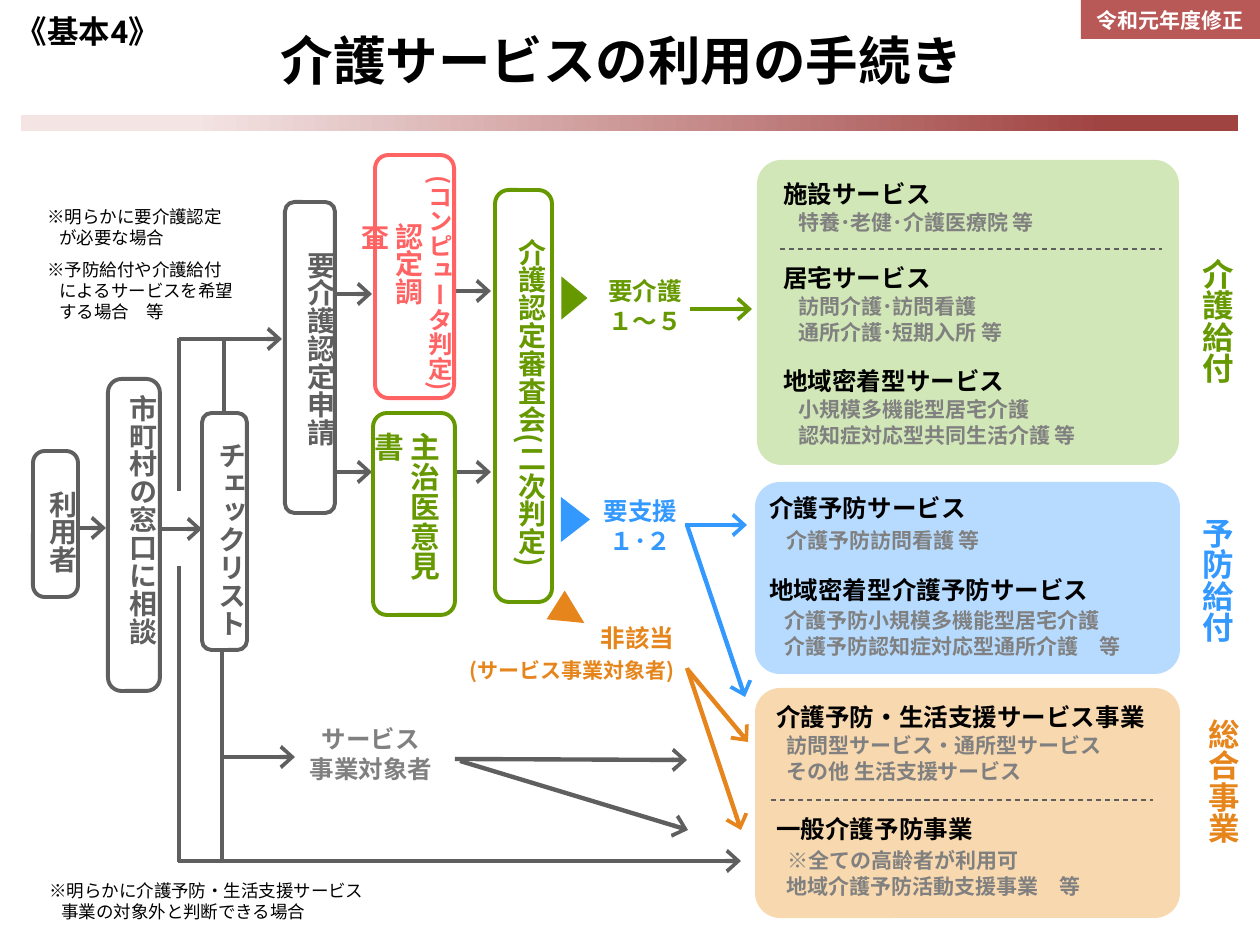
from lxml import etree
from pptx import Presentation, util as u
from pptx.dml.color import RGBColor
from pptx.enum import dml, shapes, text
from pptx.oxml import ns

PX = 914400 / 126
FONT = "Noto Sans CJK JP"
BLACK = RGBColor(0, 0, 0)
WHITE = RGBColor(255, 255, 255)
DARK = RGBColor(0x5F, 0x5F, 0x5F)
GREY = RGBColor(0x80, 0x80, 0x80)
GREEN = RGBColor(0x66, 0x99, 0x00)
BLUE = RGBColor(0x33, 0x99, 0xFF)
ORANGE = RGBColor(0xE5, 0x85, 0x1B)
PINK = RGBColor(0xFF, 0x63, 0x63)
PALE_GREEN = RGBColor(0xD2, 0xE7, 0xB7)
PALE_BLUE = RGBColor(0xB7, 0xDB, 0xFF)
PALE_ORANGE = RGBColor(0xF8, 0xD8, 0xAE)
ROSE = RGBColor(0xF4, 0xE4, 0xE4)
BRICK = RGBColor(0xA0, 0x44, 0x42)
BADGE = RGBColor(0xB9, 0x59, 0x57)
CENTER = text.PP_ALIGN.CENTER
RIGHT = text.PP_ALIGN.RIGHT


def px(*values):
    return [u.Emu(round(value * PX)) for value in values]


def add_span(para, words, size, color, bold=True, font=FONT):
    span = para.add_run()
    span.text = words
    span.font.size = u.Pt(size)
    span.font.bold = bold
    span.font.color.rgb = color
    span.font.name = font
    east = etree.SubElement(span._r.get_or_add_rPr(), ns.qn("a:ea"))
    east.set("typeface", FONT)


def add_para(frame, first, words, size, color, before=0, indent=0, align=None, bold=True):
    para = frame.paragraphs[0] if first else frame.add_paragraph()
    para.alignment = align
    para.space_before = u.Pt(before)
    if indent:
        para._p.get_or_add_pPr().set("marL", str(px(indent)[0]))
    add_span(para, words, size, color, bold)
    return para


def add_box(page, place, lines, align=None, bold=True, vertical=False):
    box = page.shapes.add_textbox(*px(*place))
    frame = box.text_frame
    frame.word_wrap = True
    frame.auto_size = text.MSO_AUTO_SIZE.SHAPE_TO_FIT_TEXT
    if vertical:
        frame._txBody.bodyPr.set("vert", "eaVert")
    for number, line in enumerate(lines):
        add_para(frame, number == 0, *line, align=align, bold=bold)
    return frame


def add_vertical(page, place, words, size, color, align=None):
    return add_box(page, place, [(words, size, color)], align, vertical=True)


def add_shape(page, kind, place, fill=None, line=None, adjust=None, turn=0):
    shape = page.shapes.add_shape(kind, *px(*place))
    shape.shadow.inherit = False
    shape.rotation = turn
    if adjust is not None:
        shape.adjustments[0] = adjust
    if fill is None:
        shape.fill.background()
    else:
        shape.fill.solid()
        shape.fill.fore_color.rgb = fill
    if line is None:
        shape.line.fill.background()
    else:
        shape.line.color.rgb = line
        shape.line.width = u.Pt(2.25)
    return shape


def add_round(page, place, adjust, fill=None, line=None):
    return add_shape(page, shapes.MSO_SHAPE.ROUNDED_RECTANGLE, place, fill, line, adjust)


def add_line(page, ends, color=DARK, arrow=True, dashed=False):
    line = page.shapes.add_connector(shapes.MSO_CONNECTOR.STRAIGHT, *px(*ends))
    line.line.color.rgb = color
    line.line.width = u.Pt(0.75 if dashed else 2.5)
    if dashed:
        line.line.dash_style = dml.MSO_LINE.DASH
    elif arrow:
        head = etree.SubElement(line.line._get_or_add_ln(), ns.qn("a:tailEnd"))
        head.set("type", "arrow")
        head.set("w", "lg")
        head.set("len", "med")
    etree.SubElement(line._element.spPr, ns.qn("a:effectLst"))


def add_header(page):
    frame = add_box(page, (55, 21, 1134, 78), [("介護サービスの利用の手続き", 30, BLACK)], CENTER)
    frame.auto_size = text.MSO_AUTO_SIZE.NONE
    frame.vertical_anchor = text.MSO_ANCHOR.MIDDLE

    bar = add_shape(page, shapes.MSO_SHAPE.RECTANGLE, (21, 115, 1217, 16), ROSE)
    bar.fill.gradient()
    bar.fill.gradient_angle = 0
    for stop, (position, color) in zip(bar.fill.gradient_stops, ((0.14, ROSE), (0.89, BRICK))):
        stop.position = position
        stop.color.rgb = color

    label = page.shapes.add_textbox(*px(0, 0, 176, 62)).text_frame
    label.word_wrap = True
    label.margin_left = label.margin_right = 0
    label.vertical_anchor = text.MSO_ANCHOR.MIDDLE
    para = label.paragraphs[0]
    para.alignment = CENTER
    para.line_spacing = u.Pt(22)
    for words, font in (("《基本", FONT), ("4", "Roboto"), ("》", FONT)):
        add_span(para, words, 18, BLACK, font=font)

    badge = add_shape(page, shapes.MSO_SHAPE.RECTANGLE, (1081, -3, 179, 42), BADGE).text_frame
    badge.vertical_anchor = text.MSO_ANCHOR.MIDDLE
    badge.word_wrap = True
    para = add_para(badge, True, "令和元年度修正", 12, WHITE, align=CENTER)
    para.line_spacing = u.Pt(16.8)


def add_steps(page):
    for ends, arrow in (
        ((224, 339, 224, 417), False), ((222, 651, 222, 862), False),
        ((179, 339, 282, 339), True), ((151, 529, 202, 529), True),
        ((69, 528, 106, 528), True), ((455, 472, 491, 472), True),
        ((335, 294, 372, 294), True), ((335, 472, 372, 472), True),
        ((455, 291, 491, 291), True), ((455, 759, 687, 760), True),
        ((222, 757, 295, 757), True), ((179, 566, 179, 862), False),
        ((179, 338, 179, 491), False), ((460, 761, 688, 830), True),
        ((178, 861, 741, 861), True),
    ):
        add_line(page, ends, arrow=arrow)
    for place, adjust, fill, color in (
        ((202, 413, 45, 237), 0.21, WHITE, DARK),
        ((108, 379, 52, 312), 0.26, WHITE, DARK),
        ((33, 451, 45, 146), 0.26, WHITE, DARK),
        ((375, 155, 79, 243), 0.17, None, PINK),
        ((285, 202, 50, 311), 0.19, None, DARK),
        ((495, 190, 57, 412), 0.24, None, GREEN),
        ((373, 413, 82, 202), 0.17, None, GREEN),
    ):
        add_round(page, place, adjust, fill, color)
    for place, words, size, color, align in (
        ((26, 478, 59, 122), "利用者", 16, DARK, None),
        ((106, 382, 59, 311), "市町村の窓口に相談", 16, DARK, CENTER),
        ((195, 430, 59, 224), "チェックリスト", 16, DARK, None),
        ((284, 239, 59, 223), "要介護認定申請", 16, DARK, None),
        ((386, 420, 62, 199), "主治医意見書", 17, GREEN, None),
        ((406, 163, 55, 249), "(コンピュータ判定)", 14, PINK, None),
        ((495, 226, 59, 374), "介護認定審査会(二次判定)", 16, GREEN, None),
        ((372, 210, 59, 131), "認定調査", 16, PINK, None),
    ):
        add_vertical(page, place, words, size, color, align)


def add_results(page):
    for place, words, color in (
        ((587, 270, 116, 72), ("要介護", "１～５"), GREEN),
        ((573, 490, 135, 72), ("要支援", "１･２"), BLUE),
        ((287, 718, 168, 72), ("サービス", "事業対象者"), GREY),
    ):
        add_box(page, place, [(line, 14, color) for line in words], CENTER)
    add_box(page, (445, 617, 242, 73),
            [("非該当", 14, ORANGE), ("(サービス事業対象者)", 12, ORANGE, 3)], RIGHT)
    for place, color, turn in (
        ((553, 285, 43, 26), GREEN, 90),
        ((553, 505, 45, 29), BLUE, 90),
        ((553, 597, 34, 34), ORANGE, 122.3),
    ):
        add_shape(page, shapes.MSO_SHAPE.ISOSCELES_TRIANGLE, place, color, turn=turn)
    for ends, color in (
        ((690, 309, 752, 309), GREEN), ((685, 525, 747, 525), BLUE),
        ((687, 525, 745, 697), BLUE), ((688, 670, 748, 742), ORANGE),
        ((687, 668, 741, 830), ORANGE),
    ):
        add_line(page, ends, color)


def heading(words, before=0.7):
    return words, 14, BLACK, before


def detail(words, indent, before=0.6):
    return words, 12, GREY, before, indent


def add_panels(page):
    add_round(page, (755, 688, 425, 230), 0.11, PALE_ORANGE)
    add_round(page, (755, 482, 425, 192), 0.13, PALE_BLUE)
    add_round(page, (757, 160, 422, 305), 0.08, PALE_GREEN)
    add_box(page, (771, 173, 382, 285), [
        heading("施設サービス"), detail("特養･老健･介護医療院 等", 15),
        heading("居宅サービス", 16), detail("訪問介護･訪問看護", 15),
        detail("通所介護･短期入所 等", 15),
        heading("地域密着型サービス", 12), detail("小規模多機能型居宅介護", 15),
        detail("認知症対応型共同生活介護 等", 15)])
    add_box(page, (757, 487, 422, 179), [
        heading("介護予防サービス"), detail("介護予防訪問看護 等", 17, 3),
        heading("地域密着型介護予防サービス", 12.5),
        detail("介護予防小規模多機能型居宅介護", 15, 2),
        detail("介護予防認知症対応型通所介護　等", 15, 0)])
    add_box(page, (764, 696, 422, 214), [
        heading("介護予防・生活支援サービス事業"),
        detail("訪問型サービス・通所型サービス", 10), detail("その他 生活支援サービス", 10),
        heading("一般介護予防事業", 17), detail("※全ての高齢者が利用可", 11, 2.5),
        detail("地域介護予防活動支援事業　等", 10)])
    for ends in ((780, 249, 1162, 249), (771, 800, 1153, 800)):
        add_line(page, ends, dashed=True)
    add_vertical(page, (1179, 246, 63, 160), "介護給付", 18, GREEN)
    add_vertical(page, (1179, 505, 63, 164), "予防給付", 18, BLUE)
    total = add_vertical(page, (1183, 706, 62, 183), "総合事業", 18, ORANGE, CENTER)
    total.paragraphs[0].line_spacing = 0.95


def add_notes(page):
    add_box(page, (35, 200, 241, 130), [
        ("※明らかに要介護認定", 10, BLACK), ("が必要な場合", 10, BLACK, 0, 12),
        ("※予防給付や介護給付", 10, BLACK, 6), ("によるサービスを希望", 10, BLACK, 0, 12),
        ("する場合　等", 10, BLACK, 0, 12)], bold=False)
    add_box(page, (37, 874, 369, 55), [
        ("※明らかに介護予防・生活支援サービス", 10, BLACK),
        ("事業の対象外と判断できる場合", 10, BLACK, 0, 12)], bold=False)


def main():
    deck = Presentation()
    deck.slide_width, deck.slide_height = u.Inches(10), u.Inches(7.5)
    page = deck.slides.add_slide(deck.slide_layouts[6])
    add_steps(page)
    add_panels(page)
    add_results(page)
    add_notes(page)
    add_header(page)
    deck.save("out.pptx")


if __name__ == "__main__":
    main()
